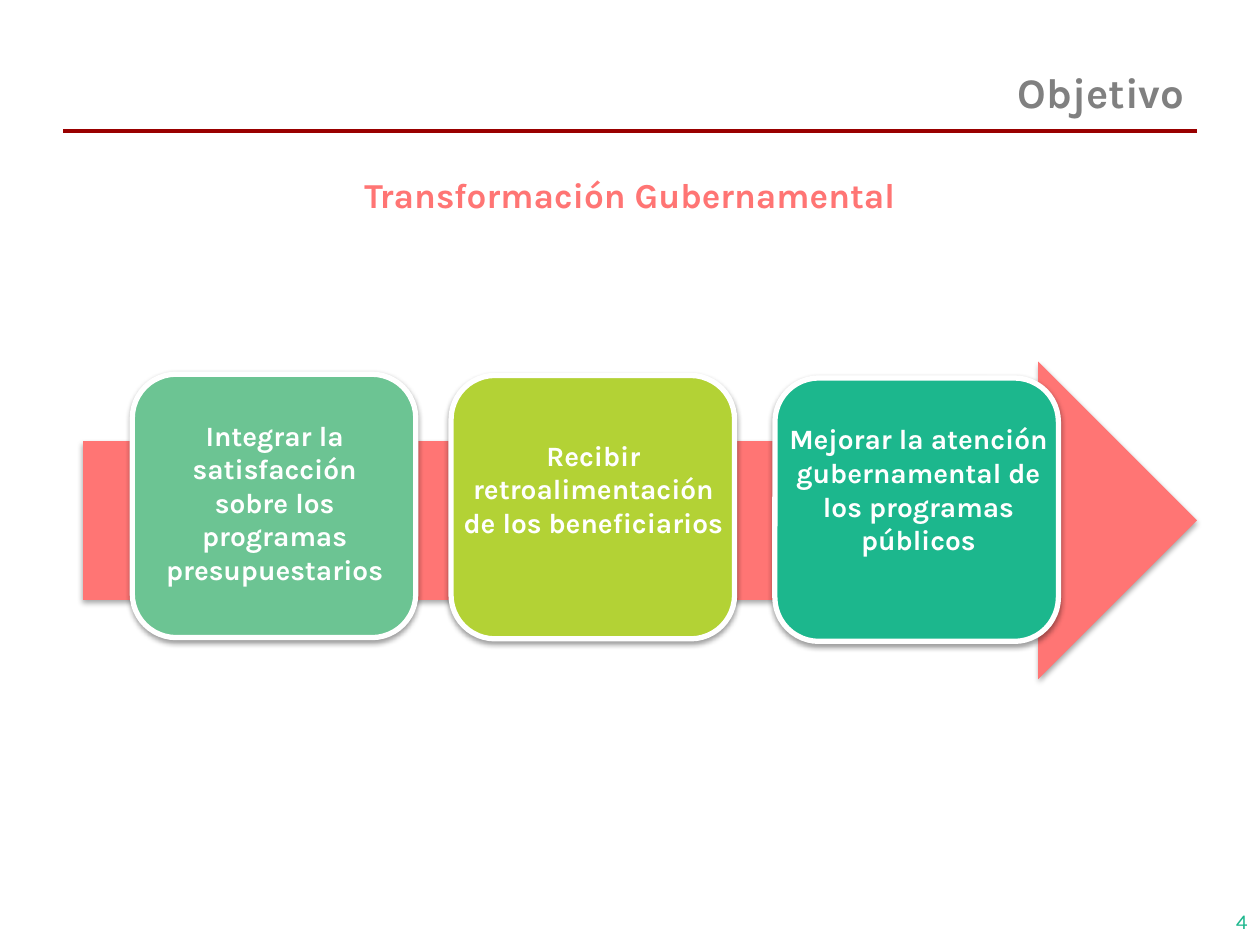
"""Build the slide on the goal of government transformation."""
from lxml import etree
from pptx import Presentation
from pptx.dml.color import RGBColor
from pptx.enum.shapes import MSO_CONNECTOR, MSO_SHAPE
from pptx.enum.text import MSO_ANCHOR, PP_ALIGN
from pptx.oxml.ns import qn
from pptx.util import Inches, Pt

ARROW, ROUND = MSO_SHAPE.DOWN_ARROW, MSO_SHAPE.ROUNDED_RECTANGLE
LINE = MSO_CONNECTOR.STRAIGHT
TOP, MIDDLE = MSO_ANCHOR.TOP, MSO_ANCHOR.MIDDLE
CENTER, RIGHT = PP_ALIGN.CENTER, PP_ALIGN.RIGHT
FONT = "Karla"
COLORS = {
    "gray": "808080", "rule": "990000", "coral": "FF7574", "mint": "6CC493",
    "lime": "B3D235", "teal": "1CB78D", "white": "FFFFFF", "black": "000000",
}
STEPS = [
    ("mint", (1.05, 2.97), (1.13, 3.27, 2.1, 1.45),
     "Integrar la satisfacción sobre los programas presupuestarios"),
    ("lime", (3.58, 2.98), (3.53, 3.43, 2.36, 1.18),
     "Recibir retroalimentación de los beneficiarios"),
    ("teal", (6.15, 3), (6.11, 3.3, 2.36, 1.45),
     "Mejorar la atención gubernamental de los programas públicos"),
]


def color(name):
    return RGBColor.from_string(COLORS[name])


def add_text(slide, area, words, hue, size, bold=True, align=CENTER, anchor=TOP):
    frame = slide.shapes.add_textbox(*map(Inches, area)).text_frame
    frame.word_wrap = True
    frame.vertical_anchor = anchor
    para = frame.paragraphs[0]
    para.text = words
    para.alignment = align
    font = para.runs[0].font
    style = {"name": FONT, "size": Pt(size), "bold": bold}
    for key, value in style.items():
        setattr(font, key, value)
    font.color.rgb = color(hue)


def add_shadow(shape, alpha, dist):
    shape.shadow.inherit = False
    effects = shape._element.spPr.find(qn("a:effectLst"))
    outer = etree.SubElement(
        effects, qn("a:outerShdw"), blurRad=str(Pt(3.1)), dist=str(Pt(dist)),
        dir="5400000", rotWithShape="0")
    tint = etree.SubElement(outer, qn("a:srgbClr"), val=COLORS["black"])
    etree.SubElement(tint, qn("a:alpha"), val=str(alpha * 1000))


def add_block(slide, kind, area, hue, alpha, dist):
    shape = slide.shapes.add_shape(kind, *map(Inches, area))
    shape.fill.solid()
    shape.fill.fore_color.rgb = color(hue)
    shape.line.fill.background()
    add_shadow(shape, alpha, dist)
    return shape


def add_rule(slide, ends):
    rule = slide.shapes.add_connector(LINE, *map(Inches, ends))
    rule.line.color.rgb = color("rule")
    rule.line.width = Pt(2)
    etree.SubElement(rule._element.spPr, qn("a:effectLst"))


def add_step(slide, hue, spot, area, words):
    card = add_block(slide, ROUND, (*spot, 2.25, 2.09), hue, 38, 1.6)
    card.line.color.rgb = color("white")
    card.line.width = Pt(3)
    add_text(slide, area, words, "white", 16)


def main():
    deck = Presentation()
    deck.slide_width, deck.slide_height = Inches(10), Inches(7.5)
    slide = deck.slides.add_slide(deck.slide_layouts[6])
    add_text(slide, (0.5, 0.42, 9, 0.61), "Objetivo", "gray", 24,
             align=RIGHT, anchor=MIDDLE)
    add_rule(slide, (9.5, 1.04, 0.5, 1.04))
    add_text(slide, (7.67, 7.11, 2.33, 0.4), "4", "teal", 12, bold=False,
             align=RIGHT, anchor=MIDDLE)
    add_text(slide, (0.5, 1.33, 9, 0.44), "Transformación Gubernamental",
             "coral", 20)
    arrow = add_block(slide, ARROW, (3.82, -0.29, 2.52, 8.84), "coral", 35, 1.8)
    arrow.rotation = 270
    for step in STEPS:
        add_step(slide, *step)
    deck.save("out.pptx")


if __name__ == "__main__":
    main()
